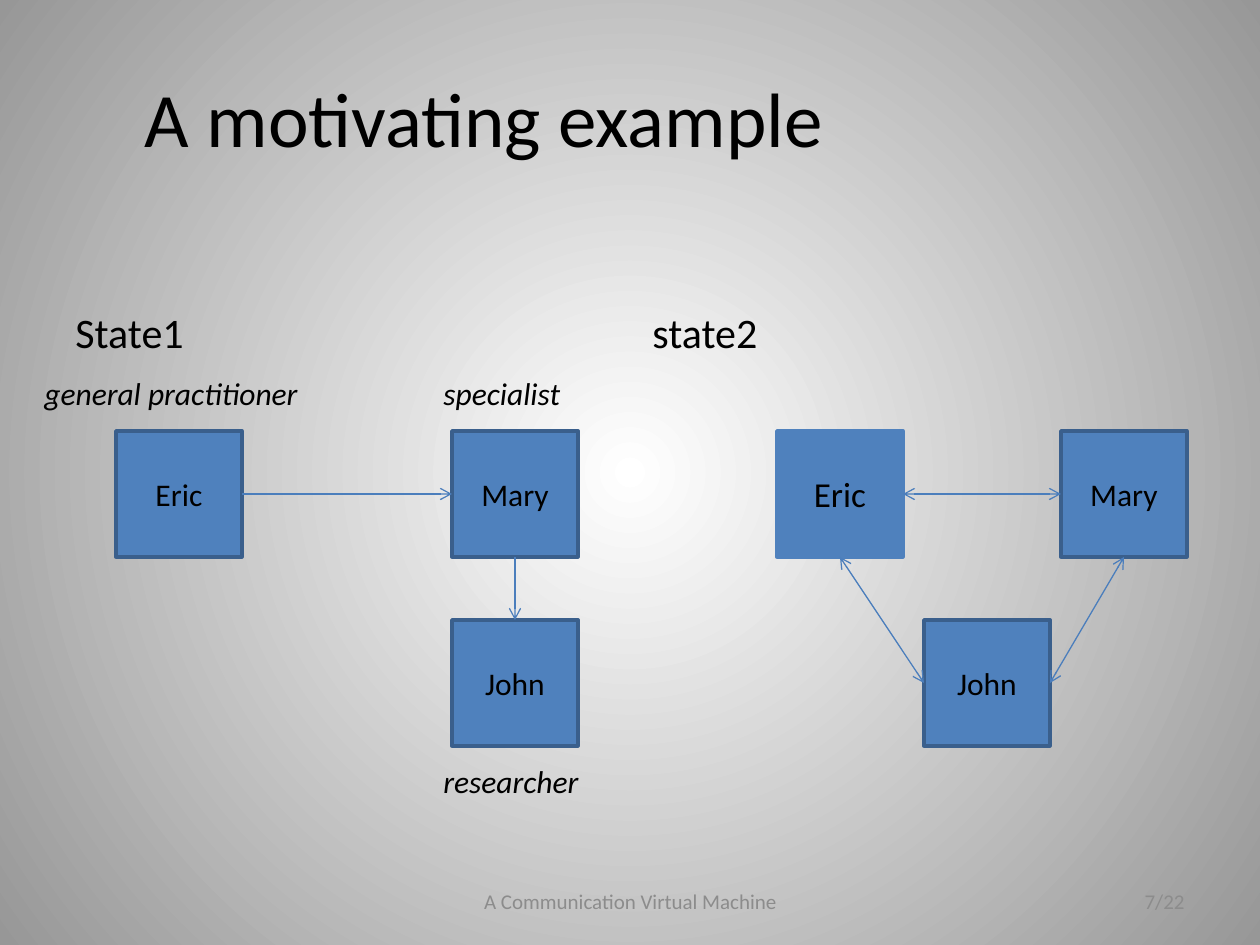
from dataclasses import dataclass
from typing import Optional

from pptx import Presentation
from pptx import oxml as ox
from pptx import util as u
from pptx.dml import color
from pptx.enum import shapes, text
from pptx.oxml import ns

EMU_PER_PX = 914400 / 126
SLIDE_W, SLIDE_H = 1260, 945
BOX = 126
TOP, LEFT, BOTTOM, RIGHT = range(4)


@dataclass(frozen=True)
class Theme:
    font: str = "Calibri"
    ink: str = "000000"
    muted: str = "8C8C8C"
    fill: str = "4F81BD"
    border: str = "3A5F8C"
    link: str = "4B7EBC"
    bg_center: str = "FFFFFF"
    bg_edge: str = "979797"
    title: int = 44
    heading: int = 24
    large: int = 20
    label: int = 18
    footer: int = 12
    border_w: float = 2
    link_w: float = 0.75


THEME = Theme()


@dataclass(frozen=True)
class Person:
    key: str
    name: str
    x: int
    y: int
    size: int = THEME.label
    border: str = THEME.border


@dataclass(frozen=True)
class Link:
    start: str
    start_side: int
    end: str
    end_side: int
    two_way: bool = False


@dataclass(frozen=True)
class Label:
    text: str
    x: int
    y: int
    w: int
    h: int
    size: int
    color: str = THEME.ink
    italic: bool = False
    wrap: bool = True
    align: Optional[text.PP_ALIGN] = None
    anchor: text.MSO_ANCHOR = text.MSO_ANCHOR.TOP
    margin_left: Optional[int] = None


MIDDLE = text.MSO_ANCHOR.MIDDLE
ROW_1, ROW_2 = 431, 620

LABELS = [
    Label("A motivating example", 63, 38, 1134, 157, THEME.title,
          anchor=MIDDLE, margin_left=82),
    Label("State1", 63, 300, 557, 544, THEME.heading),
    Label("state2", 640, 300, 557, 544, THEME.heading),
    Label("A Communication Virtual Machine", 431, 876, 399, 50, THEME.footer,
          THEME.muted, align=text.PP_ALIGN.CENTER, anchor=MIDDLE),
    Label("7/22", 903, 876, 294, 50, THEME.footer,
          THEME.muted, align=text.PP_ALIGN.RIGHT, anchor=MIDDLE),
    Label("general practitioner", 32, 368, 282, 50, THEME.label, italic=True, wrap=False),
    Label("specialist", 431, 368, 144, 50, THEME.label, italic=True, wrap=False),
    Label("researcher", 431, 756, 163, 50, THEME.label, italic=True, wrap=False),
]

PEOPLE = [
    Person("eric1", "Eric", 116, ROW_1),
    Person("mary1", "Mary", 452, ROW_1),
    Person("john1", "John", 452, ROW_2),
    Person("eric2", "Eric", 777, ROW_1, THEME.large, THEME.fill),
    Person("mary2", "Mary", 1061, ROW_1),
    Person("john2", "John", 924, ROW_2),
]

LINKS = [
    Link("eric1", RIGHT, "mary1", LEFT),
    Link("mary1", BOTTOM, "john1", TOP),
    Link("eric2", BOTTOM, "john2", LEFT, two_way=True),
    Link("john2", RIGHT, "mary2", BOTTOM, two_way=True),
    Link("mary2", LEFT, "eric2", RIGHT, two_way=True),
]


def px(n: int) -> u.Emu:
    return u.Emu(round(n * EMU_PER_PX))


def rgb(value: str) -> color.RGBColor:
    return color.RGBColor.from_string(value)


def write(tf, content: str, *, size: int, ink: str = THEME.ink, italic: bool = False,
          align=None, anchor=MIDDLE, wrap: bool = True) -> None:
    tf.word_wrap = wrap
    tf.vertical_anchor = anchor
    p = tf.paragraphs[0]
    p.alignment = align
    r = p.add_run()
    r.text = content
    r.font.name = THEME.font
    r.font.size = u.Pt(size)
    r.font.italic = italic
    r.font.color.rgb = rgb(ink)


def paint_background(s) -> None:
    s.background.fill.solid()
    bg = s.element.find(".//" + ns.qn("p:bgPr"))
    stops = "".join(
        f'<a:gs pos="{pos}"><a:srgbClr val="{value}"/></a:gs>'
        for pos, value in ((0, THEME.bg_center), (100000, THEME.bg_edge))
    )
    bg.replace(bg[0], ox.parse_xml(
        f'<a:gradFill {ns.nsdecls("a")} rotWithShape="1"><a:gsLst>{stops}</a:gsLst>'
        '<a:path path="circle"><a:fillToRect l="50000" t="50000" r="50000" b="50000"/>'
        "</a:path></a:gradFill>"
    ))


def add_label(s, label: Label) -> None:
    sp = s.shapes.add_textbox(px(label.x), px(label.y), px(label.w), px(label.h))
    if label.margin_left is not None:
        sp.text_frame.margin_left = px(label.margin_left)
    write(sp.text_frame, label.text, size=label.size, ink=label.color,
          italic=label.italic, align=label.align, anchor=label.anchor, wrap=label.wrap)


def add_person(s, person: Person):
    sp = s.shapes.add_shape(shapes.MSO_SHAPE.RECTANGLE,
                            px(person.x), px(person.y), px(BOX), px(BOX))
    sp.shadow.inherit = False
    sp.fill.solid()
    sp.fill.fore_color.rgb = rgb(THEME.fill)
    sp.line.color.rgb = rgb(person.border)
    sp.line.width = u.Pt(THEME.border_w)
    write(sp.text_frame, person.name, size=person.size, align=text.PP_ALIGN.CENTER)
    return sp


def add_link(s, link: Link, boxes: dict) -> None:
    cx = s.shapes.add_connector(shapes.MSO_CONNECTOR.STRAIGHT, 0, 0, 0, 0)
    cx.begin_connect(boxes[link.start], link.start_side)
    cx.end_connect(boxes[link.end], link.end_side)
    cx.line.color.rgb = rgb(THEME.link)
    cx.line.width = u.Pt(THEME.link_w)
    ln = cx.line._get_or_add_ln()
    for tag in ("headEnd", "tailEnd") if link.two_way else ("tailEnd",):
        ln.append(ox.parse_xml(f'<a:{tag} {ns.nsdecls("a")} type="arrow"/>'))
    cx._element.spPr.append(ox.parse_xml(f'<a:effectLst {ns.nsdecls("a")}/>'))


def main() -> None:
    prs = Presentation()
    prs.slide_width, prs.slide_height = px(SLIDE_W), px(SLIDE_H)
    s = prs.slides.add_slide(prs.slide_layouts[6])
    paint_background(s)
    for label in LABELS:
        add_label(s, label)
    boxes = {person.key: add_person(s, person) for person in PEOPLE}
    for link in LINKS:
        add_link(s, link, boxes)
    prs.save("out.pptx")


if __name__ == "__main__":
    main()
